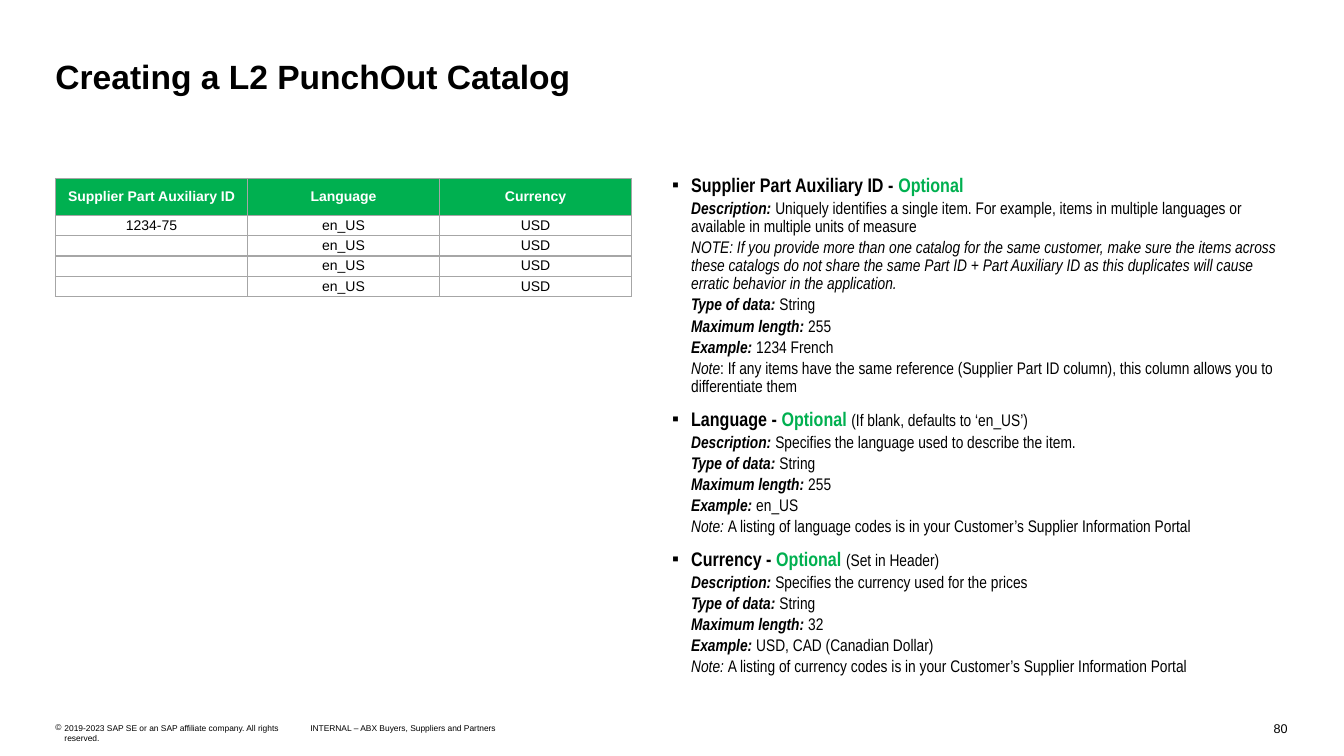
from dataclasses import dataclass

from lxml.etree import SubElement as Sub
from pptx import Presentation
from pptx.dml.color import RGBColor as RGB
from pptx.enum.text import MSO_ANCHOR as Anchor, MSO_AUTO_SIZE as Fit, PP_ALIGN as Align
from pptx.oxml.ns import qn
from pptx.util import Inches, Pt


@dataclass(frozen=True)
class Theme:
    ink: str = "000000"
    paper: str = "FFFFFF"
    green: str = "00B050"
    rule: str = "A6A6A6"
    face: str = "Arial"
    slim: str = "Arial Narrow"
    title: int = 24
    head: int = 14
    body: int = 12
    cell: int = 10
    page: int = 9
    foot: int = 6


class Deck:
    def __init__(self, theme):
        self.theme = theme
        self.show = Presentation()
        self.show.slide_width, self.show.slide_height = Inches(13.34), Inches(7.5)
        self.slide = self.show.slides.add_slide(self.show.slide_layouts[6])

    def style(self, font, size, face=None, color=None, bold=False):
        font.size, font.name, font.bold = Pt(size), face or self.theme.face, bold
        font.color.rgb = RGB.from_string(color or self.theme.ink)

    def frame(self, left, top, width, height, wrap=True):
        box = self.slide.shapes.add_textbox(*map(Inches, (left, top, width, height)))
        text = box.text_frame
        text.margin_left = text.margin_right = text.margin_top = text.margin_bottom = 0
        text.word_wrap, text.auto_size = wrap, Fit.SHAPE_TO_FIT_TEXT
        return text

    def indent(self, para, left, mark=None):
        props = para._p.get_or_add_pPr()
        props.set("marL", str(Inches(left)))
        props.set("indent", str(-Inches(left) if mark else 0))
        if mark:
            Sub(props, qn("a:buFont"), typeface=self.theme.face)
            Sub(props, qn("a:buChar"), char=mark)

    def label(self, text, place, size, bold=False, wrap=True, align=Align.LEFT, mark=None):
        para = self.frame(*place, wrap=wrap).paragraphs[0]
        para.text, para.alignment = text, align
        if mark:
            self.indent(para, 0.09, mark)
        self.style(para.font, size, bold=bold)

    def line(self, para, runs, size, after=2, mark=None):
        """Each run is its text and a dict of the font settings that differ."""
        self.indent(para, 0.19, mark)
        para.line_spacing, para.space_after = Pt(13), Pt(after)
        self.style(para.font, size, self.theme.slim)
        for text, looks in runs:
            run = para.add_run()
            run.text = text
            for key, value in looks.items():
                if key == "color":
                    run.font.color.rgb = RGB.from_string(value)
                else:
                    setattr(run.font, key, value)

    def fields(self, place, groups):
        text = self.frame(*place)
        paras = iter([text.paragraphs[0]])
        for name, hint, facts in groups:
            runs = [(f"{name} - ", {"bold": True}),
                    ("Optional " if hint else "Optional",
                     {"bold": True, "color": self.theme.green})]
            if hint:
                runs.append((hint, {"size": Pt(self.theme.body)}))
            self.line(next(paras, None) or text.add_paragraph(), runs,
                      self.theme.head, mark="▪")
            for tag, fact in facts:
                bold = not tag.lower().startswith("note")
                runs = [(tag, {"bold": bold, "italic": True}), (fact, {})]
                self.line(text.add_paragraph(), runs[:2 if fact else 1], self.theme.body,
                          after=12 if (tag, fact) == facts[-1] else 2)

    def cell(self, cell, text, head):
        cell.margin_left = cell.margin_right = cell.margin_top = cell.margin_bottom = 0
        cell.vertical_anchor = Anchor.MIDDLE
        props = cell._tc.get_or_add_tcPr()
        for side in ("lnL", "lnR", "lnT", "lnB"):
            edge = Sub(props, qn(f"a:{side}"), w=str(Pt(1)))
            Sub(Sub(edge, qn("a:solidFill")), qn("a:srgbClr"), val=self.theme.rule)
        cell.fill.solid()
        cell.fill.fore_color.rgb = RGB.from_string(self.theme.green if head else self.theme.paper)
        para = cell.text_frame.paragraphs[0]
        para.alignment = Align.CENTER
        self.style(para.font, self.theme.cell, bold=head,
                   color=self.theme.paper if head else self.theme.ink)
        if text:
            para.add_run().text = text
        else:  # keeps an empty row low
            Sub(para._p, qn("a:endParaRPr"), sz=str(self.theme.cell * 100))

    def table(self, place, rows, tall, low):
        grid = self.slide.shapes.add_table(len(rows), len(rows[0]), *map(Inches, place)).table
        for i, row in enumerate(rows):
            grid.rows[i].height = Inches(low if i else tall)
            for j, text in enumerate(row):
                self.cell(grid.cell(i, j), text, i == 0)


def main():
    theme = Theme()
    deck = Deck(theme)

    # Footer
    deck.label("80", (12.63, 7.15, 0.15, 0.15), theme.page, wrap=False, align=Align.RIGHT)
    deck.label("INTERNAL – ABX Buyers, Suppliers and Partners",
               (3.08, 7.17, 1.87, 0.1), theme.foot, wrap=False)
    deck.label("2019-2023 SAP SE or an SAP affiliate company. All rights reserved.",
               (0.55, 7.17, 2.48, 0.2), theme.foot, mark="©")

    # Field descriptions
    kind, size, about, case = "Type of data: ", "Maximum length: ", "Description: ", "Example: "
    deck.fields((6.67, 1.77, 6.12, 5.54), [
        ("Supplier Part Auxiliary ID", "", [
            (about, "Uniquely identifies a single item. For example, items in multiple "
                    "languages or available in multiple units of measure"),
            ("NOTE: If you provide more than one catalog for the same customer, make sure "
             "the items across these catalogs do not share the same Part ID + Part Auxiliary "
             "ID as this duplicates will cause erratic behavior in the application.", ""),
            (kind, "String"), (size, "255"), (case, "1234 French"),
            ("Note", ": If any items have the same reference (Supplier Part ID column), "
                     "this column allows you to differentiate them")]),
        ("Language", "(If blank, defaults to ‘en_US’)", [
            (about, "Specifies the language used to describe the item."),
            (kind, "String"), (size, "255"), (case, "en_US"),
            ("Note: ", "A listing of language codes is in your Customer’s "
                       "Supplier Information Portal")]),
        ("Currency", "(Set in Header)", [
            (about, "Specifies the currency used for the prices"),
            (kind, "String"), (size, "32"), (case, "USD, CAD (Canadian Dollar)"),
            ("Note: ", "A listing of currency codes is in your Customer’s "
                       "Supplier Information Portal")]),
    ])

    # Title
    deck.label("Creating a L2 PunchOut Catalog", (0.55, 0.55, 12.23, 0.4), theme.title, bold=True)

    # Sample catalog rows
    heads = ("Supplier Part Auxiliary ID", "Language", "Currency")
    rows = [(part, "en_US", "USD") for part in ("1234-75", "", "", "")]
    deck.table((0.55, 1.77, 5.72, 1.17), [heads, *rows], tall=0.37, low=0.2)

    deck.show.save("out.pptx")


if __name__ == "__main__":
    main()
